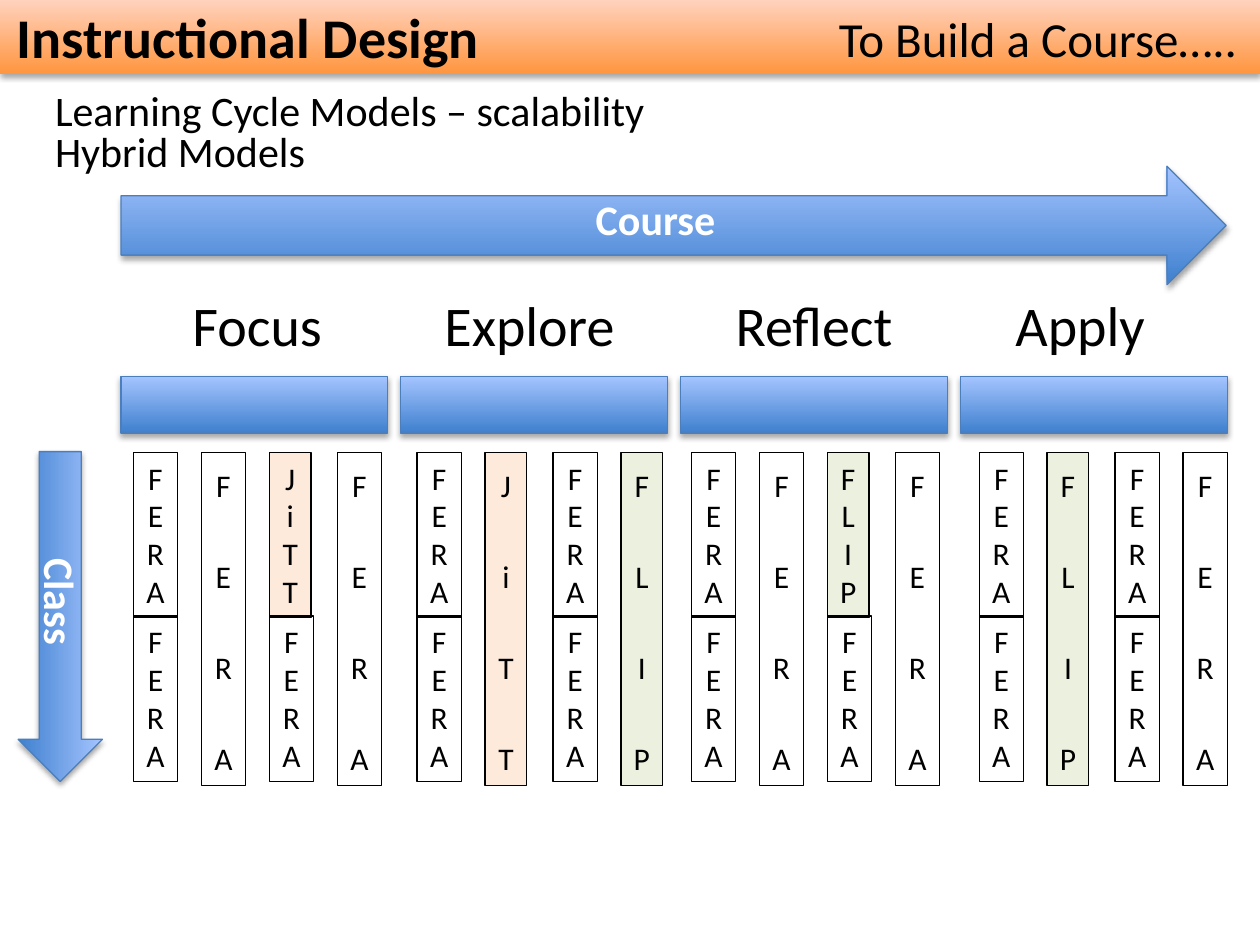
from lxml import etree
from pptx import Presentation
from pptx import util as u
from pptx.dml.color import RGBColor
from pptx.enum import shapes, text
from pptx.oxml import ns

COLORS = {
    "black": "000000", "white": "FFFFFF",
    "orange": "FF953E", "peach": "FFD2BD",
    "blue": "3F80CE", "sky": "A4C4FF", "edge": "4B7EBC",
    "JiTT": "FDEADA", "FLIP": "EBF1DE",
}
# Stage: name, left and width of its heading, left of its first class, classes.
# A class with two cycles stacks two short ones; a single cycle fills the column.
STAGES = [
    ("Focus", 3.63, 3.18, 2.69, [("FERA", "FERA"), ("FERA",), ("JiTT", "FERA"), ("FERA",)]),
    ("Explore", 8.71, 3.99, 8.41, [("FERA", "FERA"), ("JiTT",), ("FERA", "FERA"), ("FLIP",)]),
    ("Reflect", 14.58, 3.73, 13.94, [("FERA", "FERA"), ("FERA",), ("FLIP", "FERA"), ("FERA",)]),
    ("Apply", 20.22, 3.15, 19.74, [("FERA", "FERA"), ("FLIP",), ("FERA", "FERA"), ("FERA",)]),
]
BAR_LEFT, BAR_PITCH = 2.44, 5.64
CLASS_TOP, CLASS_PITCH, CYCLE_STEP = 9.12, 1.37, 3.3


def rgb(name):
    return RGBColor.from_string(COLORS[name])


def add_text(canvas, lines, box, size=24, color="black", bold=False, align=None,
             line_spacing=None, gap=0, rotation=0):
    """Add an unwrapped text box with one paragraph per line; gap is in points."""
    label = canvas.add_textbox(*map(u.Cm, box))
    label.rotation = rotation
    frame = label.text_frame
    frame.word_wrap = False
    frame.auto_size = text.MSO_AUTO_SIZE.SHAPE_TO_FIT_TEXT
    for index, line in enumerate(lines):
        paragraph = frame.add_paragraph() if index else frame.paragraphs[0]
        paragraph.alignment = align
        paragraph.line_spacing = line_spacing
        if index and gap:
            paragraph.space_before = u.Pt(gap)
        run = paragraph.add_run()
        run.text = line
        run.font.name = "Calibri"
        run.font.size = u.Pt(size)
        run.font.bold = bold
        run.font.color.rgb = rgb(color)
    return label


def add_shadow(shape):
    shape.shadow.inherit = False
    effects = shape._element.spPr.find(ns.qn("a:effectLst"))
    outer = etree.SubElement(effects, ns.qn("a:outerShdw"), blurRad="40000",
                             dist="23000", dir="5400000", rotWithShape="0")
    tint = etree.SubElement(outer, ns.qn("a:srgbClr"), val=COLORS["black"])
    etree.SubElement(tint, ns.qn("a:alpha"), val="35000")


def add_glossy(canvas, kind, box, bottom="blue", top="sky", edge="edge", rotation=0):
    """Add a shadowed shape with a vertical gradient."""
    shape = canvas.add_shape(kind, *map(u.Cm, box))
    shape.rotation = rotation
    shape.fill.gradient()
    shape.fill.gradient_angle = 90
    for stop, name in zip(shape.fill.gradient_stops, (bottom, top)):
        stop.color.rgb = rgb(name)
    if edge:
        shape.line.color.rgb = rgb(edge)
        shape.line.width = u.Pt(0.75)
    else:
        shape.line.fill.background()
    add_shadow(shape)


def add_cycle(canvas, word, left, top, tall):
    """Add one outlined cycle with its letters running downwards."""
    width = 0.89 if word == "FERA" else 0.84
    spread = {"line_spacing": 1.2, "gap": 26} if tall else {}
    cycle = add_text(canvas, word, (left, top, width, 6.71 if tall else 3.33),
                     size=18, align=text.PP_ALIGN.CENTER, **spread)
    cycle.line.color.rgb = rgb("black")
    cycle.line.width = u.Pt(0.75)
    if word in COLORS:
        cycle.fill.solid()
        cycle.fill.fore_color.rgb = rgb(word)


def add_class(canvas, cycles, left):
    tall = len(cycles) == 1
    column = canvas if tall else canvas.add_group_shape().shapes
    for row, word in enumerate(cycles):
        add_cycle(column, word, left, CLASS_TOP + row * CYCLE_STEP, tall)


def main():
    deck = Presentation()
    deck.slide_width, deck.slide_height = u.Cm(25.4), u.Cm(19.05)
    canvas = deck.slides.add_slide(deck.slide_layouts[6]).shapes
    kinds = shapes.MSO_SHAPE

    add_glossy(canvas, kinds.RECTANGLE, (0, 0, 25.4, 1.5), "orange", "peach", edge=None)
    add_text(canvas, ["Instructional Design"], (0.08, -0.08, 9.93, 1.63), size=32, bold=True)
    add_text(canvas, ["To Build a Course….."], (16.66, 0.05, 8.74, 1.45), size=28)
    add_text(canvas, ["Learning Cycle Models – scalability", "Hybrid Models"],
             (0.86, 1.78, 12.55, 1.93), line_spacing=0.8)

    for index, (name, left, width, first_class, classes) in enumerate(STAGES):
        add_text(canvas, [name], (left, 5.74, width, 1.63), size=32)
        add_glossy(canvas, kinds.RECTANGLE,
                   (BAR_LEFT + index * BAR_PITCH, 7.59, 5.38, 1.14))
        for column, cycles in enumerate(classes):
            add_class(canvas, cycles, first_class + column * CLASS_PITCH)

    add_glossy(canvas, kinds.RIGHT_ARROW, (BAR_LEFT, 3.35, 22.28, 2.39))
    add_text(canvas, ["Course"], (11.76, 3.78, 2.97, 1.27), color="white", bold=True)
    add_glossy(canvas, kinds.RIGHT_ARROW, (-2.11, 11.58, 6.65, 1.7), rotation=90)
    add_text(canvas, ["Class"], (0.08, 11.51, 2.29, 1.27), color="white", bold=True,
             rotation=90)

    deck.save("out.pptx")


if __name__ == "__main__":
    main()
